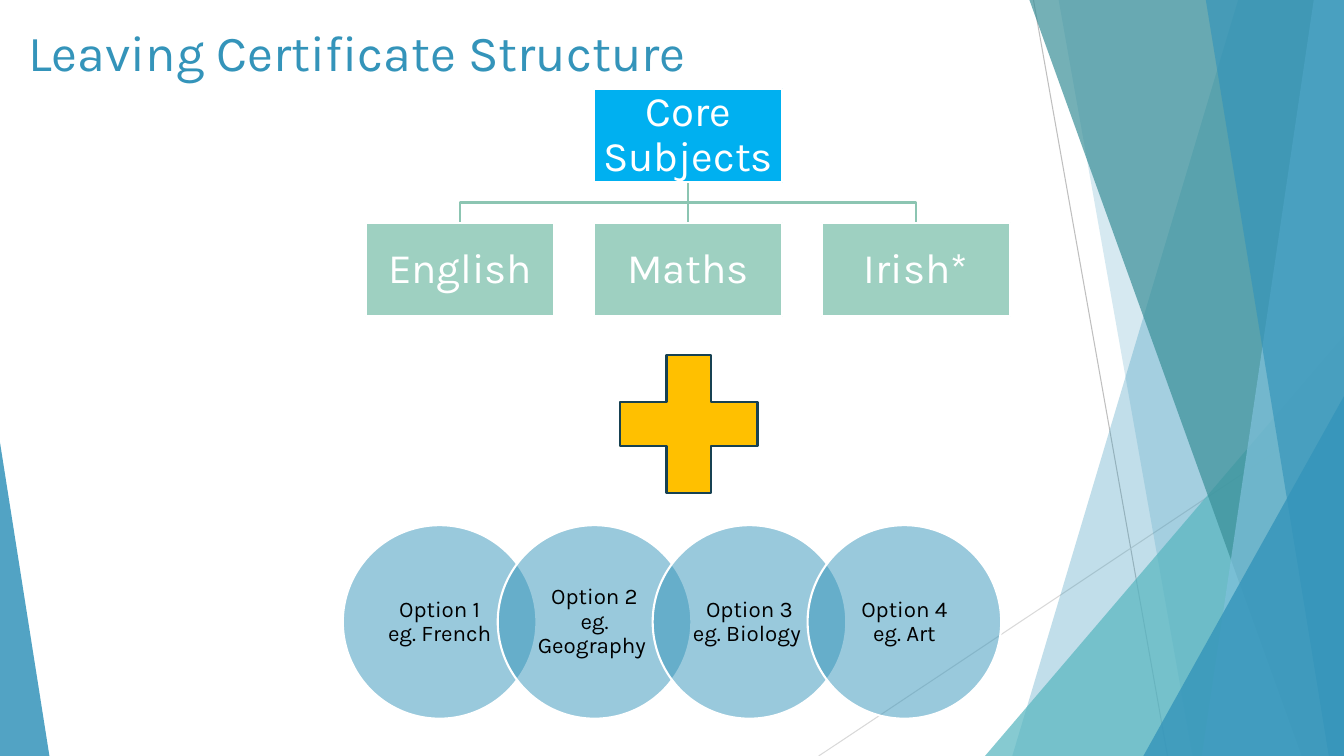
from lxml import etree
from pptx import Presentation
from pptx import util as u
from pptx.dml import color
from pptx.enum import shapes, text
from pptx.oxml import ns

FONT = "Karla"
WHITE = "FFFFFF"
BLUE = "3494BA"
GREEN = "75BDA7"
WIDTH, HEIGHT = 13.33, 7.5


def rgb(value):
    return color.RGBColor.from_string(value)


def paint(shape, fill, opacity=100, line=None):
    """Set fill, opacity in percent and a 1.5 pt outline, without shadow."""
    shape.shadow.inherit = False
    shape.fill.solid()
    shape.fill.fore_color.rgb = rgb(fill)
    if opacity < 100:
        clr = shape.fill._xPr.find(".//" + ns.qn("a:srgbClr"))
        etree.SubElement(clr, ns.qn("a:alpha"), val=str(opacity * 1000))
    if line:
        shape.line.color.rgb = rgb(line)
        shape.line.width = u.Pt(1.5)
    else:
        shape.line.fill.background()


def add_outline(slide, points, close):
    corners = [(u.Inches(x), u.Inches(y)) for x, y in points]
    builder = slide.shapes.build_freeform(*corners[0], scale=1.0)
    builder.add_line_segments(corners[1:], close=close)
    return builder.convert_to_shape()


def add_line(slide, start, end, line, width):
    ends = [u.Inches(length) for length in (*start, *end)]
    connector = slide.shapes.add_connector(shapes.MSO_CONNECTOR.STRAIGHT, *ends)
    connector.line.color.rgb = rgb(line)
    connector.line.width = u.Pt(width)
    etree.SubElement(connector._element.spPr, ns.qn("a:effectLst"))


def add_shape(slide, preset, left, top, width, height):
    box = [u.Inches(length) for length in (left, top, width, height)]
    return slide.shapes.add_shape(preset, *box)


def write(shape, words, size, ink, side_inset):
    frame = shape.text_frame
    frame.word_wrap = True
    frame.vertical_anchor = text.MSO_ANCHOR.MIDDLE
    frame.margin_left = frame.margin_right = u.Inches(side_inset)
    frame.margin_top = frame.margin_bottom = u.Inches(0.02)
    frame.text = words
    paragraph = frame.paragraphs[0]
    paragraph.alignment = text.PP_ALIGN.CENTER
    paragraph.line_spacing = 0.9
    paragraph.font.name = FONT
    paragraph.font.size = u.Pt(size)
    paragraph.font.color.rgb = rgb(ink)


def add_facets(slide):
    """Draw the translucent facets along both slide edges."""
    add_line(slide, (10.25, 0), (11.58, HEIGHT), "BFBFBF", 0.75)
    add_line(slide, (WIDTH, 4.03), (8.12, HEIGHT), "D9D9D9", 0.75)
    # Top left x, top y, bottom left x, fill, opacity
    bands = [
        (12.28, 0, 10.04, BLUE, 30),
        (10.5, 0, 11.83, BLUE, 20),
        (WIDTH, 3.33, 9.77, "58B6C0", 72),
        (10.21, 0, 12.91, "3A8F98", 70),
        (13.03, 0, 11.92, "7FC1DB", 70),
        (11.96, 0, 13.18, BLUE, 65),
        (WIDTH, 3.93, 11.34, BLUE, 80),
    ]
    for top_x, top, bottom_x, fill, opacity in bands:
        corners = [(top_x, top), (WIDTH, top), (WIDTH, HEIGHT), (bottom_x, HEIGHT)]
        paint(add_outline(slide, corners, True), fill, opacity)
    left_facet = add_outline(slide, [(0, 4.39), (0.49, HEIGHT), (0, HEIGHT)], True)
    paint(left_facet, BLUE, 85)


def add_title(slide, left, top, width, height):
    title = slide.shapes.title
    title.left, title.top = u.Inches(left), u.Inches(top)
    title.width, title.height = u.Inches(width), u.Inches(height)
    frame = title.text_frame
    frame.vertical_anchor = text.MSO_ANCHOR.TOP
    frame.text = "Leaving Certificate Structure "
    paragraph = frame.paragraphs[0]
    paragraph.alignment = text.PP_ALIGN.LEFT
    paragraph.font.name = FONT
    paragraph.font.size = u.Pt(36)
    paragraph.font.color.rgb = rgb(BLUE)


def add_core_subjects(slide, left, top, width, height):
    """Draw the core subjects as a two-level tree."""
    subjects = ["English", "Maths", "Irish*"]
    box_width, box_height = 1.87, 0.93
    step = (width - box_width) / (len(subjects) - 1)
    middle = left + width / 2
    root_bottom, branch_top = top + box_height, top + height - box_height
    bus = (root_bottom + branch_top) / 2
    branches = [(left + i * step, name) for i, name in enumerate(subjects)]

    for x in (left + box_width / 2, left + width - box_width / 2):
        route = [(middle, root_bottom), (middle, bus), (x, bus), (x, branch_top)]
        elbow = add_outline(slide, route, False)
        elbow.shadow.inherit = False
        elbow.fill.background()
        elbow.line.color.rgb = rgb("8CC5B2")
        elbow.line.width = u.Pt(1.5)
    add_line(slide, (middle, root_bottom), (middle, branch_top), "8CC5B2", 1.5)

    boxes = [(middle - box_width / 2, top, "Core Subjects", "00B0F0", 100)]
    boxes += [(x, branch_top, name, GREEN, 70) for x, name in branches]
    for x, y, name, fill, opacity in boxes:
        box = add_shape(slide, shapes.MSO_SHAPE.RECTANGLE, x, y, box_width, box_height)
        paint(box, fill, opacity, WHITE)
        write(box, name, 30, WHITE, 0.02)


def add_plus(slide, left, top, size):
    plus = add_shape(slide, shapes.MSO_SHAPE.MATH_PLUS, left, top, size, size)
    paint(plus, "FFC000", line="174152")


def add_options(slide, left, top, width, diameter):
    """Draw the option subjects as a row of overlapping circles."""
    examples = ["French", "Geography ", "Biology ", "Art"]
    step = (width - diameter) / (len(examples) - 1)
    for i, example in enumerate(examples):
        circle = add_shape(slide, shapes.MSO_SHAPE.OVAL,
                           left + i * step, top, diameter, diameter)
        paint(circle, BLUE, 50, WHITE)
        write(circle, f"Option {i + 1}\veg. {example}", 16, "000000", 0.11)


def main():
    deck = Presentation()
    deck.slide_width, deck.slide_height = u.Inches(WIDTH), u.Inches(HEIGHT)
    slide = deck.slides.add_slide(deck.slide_layouts.get_by_name("Title Only"))
    add_facets(slide)
    add_title(slide, 0.18, 0.16, 9.4, 1.44)
    add_core_subjects(slide, 3.63, 0.88, 6.39, 2.26)
    add_plus(slide, 5.9, 3.28, 1.86)
    add_options(slide, 3.4, 5.21, 6.53, 1.92)
    deck.save("out.pptx")


if __name__ == "__main__":
    main()
